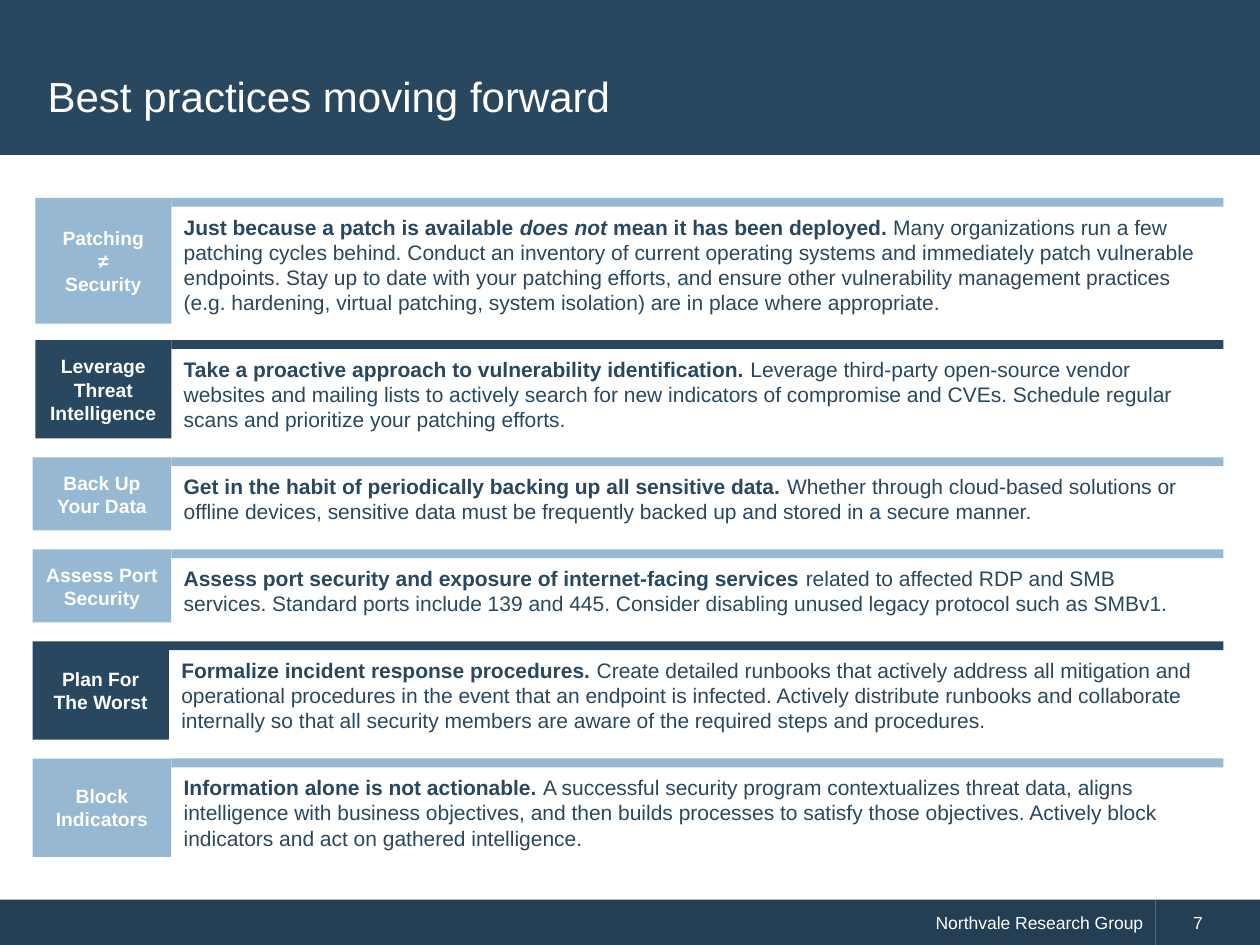
from dataclasses import dataclass

from pptx import Presentation
from pptx.dml.color import RGBColor
from pptx.enum.shapes import MSO_SHAPE
from pptx.enum.text import MSO_ANCHOR, MSO_AUTO_SIZE, PP_ALIGN
from pptx.util import Inches, Pt


@dataclass(frozen=True)
class Theme:
    font: str = "Arial"
    navy: str = "29475F"
    sky: str = "96B8D2"
    footer: str = "243F54"
    white: str = "FFFFFF"
    title_size: int = 24
    body_size: int = 12
    label_size: int = 11
    footer_size: int = 10


@dataclass(frozen=True)
class Practice:
    top: float
    height: float
    left: float
    right: float
    color: str
    label: str
    runs: tuple  # (text, bold, italic)


class SlideBuilder:
    def __init__(self, slide, theme):
        self.slide = slide
        self.theme = theme

    def style(self, paragraph, size, color, bold=None):
        font = paragraph.font
        font.name, font.size, font.bold = self.theme.font, Pt(size), bold
        font.color.rgb = RGBColor.from_string(color)

    def block(self, left, top, width, height, color, text="", size=None,
              bold=None, align=PP_ALIGN.CENTER, inset=0.1):
        rect = self.slide.shapes.add_shape(
            MSO_SHAPE.RECTANGLE, Inches(left), Inches(top), Inches(width), Inches(height))
        rect.shadow.inherit = False
        rect.fill.solid()
        rect.fill.fore_color.rgb = RGBColor.from_string(color)
        rect.line.fill.background()
        if text:
            frame = rect.text_frame
            frame.text = text
            frame.word_wrap = True
            frame.vertical_anchor = MSO_ANCHOR.MIDDLE
            frame.margin_left = Inches(inset)
            for paragraph in frame.paragraphs:
                paragraph.alignment = align
                self.style(paragraph, size, self.theme.white, bold)

    def text(self, left, top, width, height, runs, size, color,
             anchor=MSO_ANCHOR.TOP, auto_size=MSO_AUTO_SIZE.NONE):
        frame = self.slide.shapes.add_textbox(
            Inches(left), Inches(top), Inches(width), Inches(height)).text_frame
        frame.word_wrap = True
        frame.auto_size = auto_size
        frame.vertical_anchor = anchor
        paragraph = frame.paragraphs[0]
        self.style(paragraph, size, color)
        for content, bold, italic in runs:
            for index, line in enumerate(content.split("\n")):
                if index:
                    paragraph.add_line_break()
                run = paragraph.add_run()
                run.text = line
                run.font.bold, run.font.italic = bold, italic

    def practice(self, item):
        bar, bar_right, text_right = 0.07, 9.71, 9.76
        gap = 0.08  # from the top of the bar to the text
        self.block(item.left, item.top, item.right - item.left, item.height,
                   item.color, item.label, self.theme.label_size, True)
        self.block(item.right, item.top, bar_right - item.right, bar, item.color)
        self.text(item.right, item.top + gap, text_right - item.right, item.height - gap,
                  item.runs, self.theme.body_size, self.theme.navy,
                  auto_size=MSO_AUTO_SIZE.SHAPE_TO_FIT_TEXT)


THEME = Theme()
NBSP = chr(160)

PRACTICES = [
    Practice(1.57, 1.0, 0.28, 1.36, THEME.sky, "Patching\n≠\nSecurity", (
        ("Just because a patch is available ", True, False),
        ("does not ", True, True),
        ("mean it has been deployed.", True, False),
        (" Many organizations run a few patching cycles behind. Conduct an inventory of "
         "current operating systems and immediately patch vulnerable endpoints. Stay up to "
         "date with your patching efforts, and ensure other vulnerability management "
         "practices \n(e.g. hardening, virtual patching, system isolation) are in place "
         "where appropriate.", False, False))),
    Practice(2.7, 0.78, 0.28, 1.36, THEME.navy, "Leverage Threat Intelligence", (
        ("Take a proactive approach to vulnerability identification.", True, False),
        (" Leverage third-party open-source vendor websites and mailing lists to actively "
         "search for new indicators of compromise and CVEs. Schedule regular scans and "
         "prioritize your patching efforts.", False, False))),
    Practice(3.63, 0.58, 0.26, 1.36, THEME.sky, "Back Up Your Data", (
        ("Get in the habit of periodically backing up all sensitive data. ", True, False),
        ("Whether through cloud-based solutions or offline devices, sensitive data must be "
         "frequently backed up and stored in a secure manner.", False, False))),
    Practice(4.36, 0.58, 0.26, 1.36, THEME.sky, "Assess Port Security", (
        ("Assess port security and exposure of internet-facing services ", True, False),
        (f"related to affected RDP and SMB services.{NBSP}Standard ports include{NBSP}139 "
         "and 445. Consider disabling unused legacy protocol such as SMBv1.", False, False))),
    Practice(5.09, 0.78, 0.26, 1.34, THEME.navy, "Plan For The Worst", (
        ("Formalize incident response procedures. ", True, False),
        ("Create detailed runbooks that actively address all mitigation and operational "
         "procedures in the event that an endpoint is infected. Actively distribute runbooks "
         "and collaborate internally so that all security members are aware of the required "
         "steps and procedures.", False, False))),
    Practice(6.02, 0.78, 0.26, 1.36, THEME.sky, "Block Indicators", (
        ("Information alone is not actionable. ", True, False),
        ("A successful security program contextualizes threat data, aligns intelligence with "
         "business objectives, and then builds processes to satisfy those objectives. "
         "Actively block indicators and act on gathered intelligence.", False, False))),
]


def main():
    deck = Presentation()
    deck.slide_width, deck.slide_height = Inches(10), Inches(7.5)
    builder = SlideBuilder(deck.slides.add_slide(deck.slide_layouts[6]), THEME)

    # Footer
    footer_top, footer_height, number_left = 7.14, 0.37, 9.17
    builder.block(0, footer_top, number_left, footer_height, THEME.footer,
                  "Northvale Research Group", THEME.footer_size, align=PP_ALIGN.RIGHT)
    builder.block(number_left, footer_top, 10 - number_left, footer_height, THEME.footer,
                  "7", THEME.footer_size, align=PP_ALIGN.LEFT, inset=0.3)

    # Header
    builder.block(0, 0, 10, 1.23, THEME.navy)
    builder.text(0.28, 0.28, 9.43, 0.96, [("Best practices moving forward", None, None)],
                 THEME.title_size, THEME.white, anchor=MSO_ANCHOR.MIDDLE)

    # Best practices
    for item in PRACTICES:
        builder.practice(item)

    deck.save("out.pptx")


if __name__ == "__main__":
    main()
